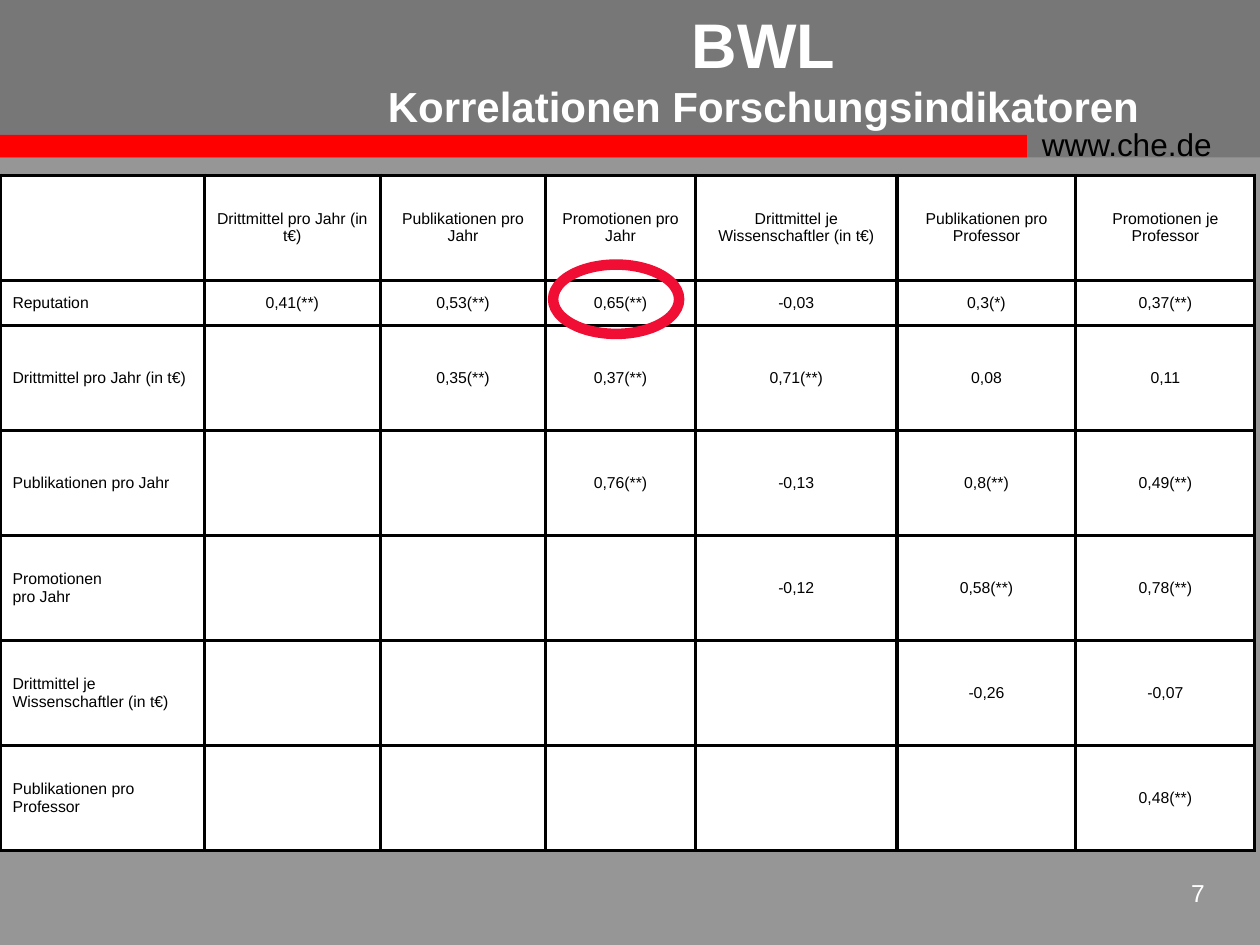
from lxml.etree import SubElement
from pptx import Presentation
from pptx.dml.color import RGBColor
from pptx.enum.shapes import MSO_SHAPE as Form
from pptx.enum.text import MSO_ANCHOR as Anchor, MSO_AUTO_SIZE as Fit, PP_ALIGN as Align
from pptx.oxml.ns import qn
from pptx.util import Inches, Pt

BLACK = RGBColor(0, 0, 0)
WHITE = RGBColor(255, 255, 255)
GREY = RGBColor(0x96, 0x96, 0x96)
DARK = RGBColor(0x77, 0x77, 0x77)
RED = RGBColor(255, 0, 0)
ROSE = RGBColor(0xF0, 0x0E, 0x34)

WIDTHS = [1.62, 1.4, 1.31, 1.19, 1.6, 1.42, 1.42]
HEAD_H, ROW_H = 5 / 6, 0.36
ROWS = [
    ["", "Drittmittel pro Jahr (in t€)", "Publikationen pro Jahr", "Promotionen pro Jahr",
     "Drittmittel je Wissenschaftler (in t€)", "Publikationen pro Professor",
     "Promotionen je Professor"],
    ["Reputation", "0,41(**)", "0,53(**)", "0,65(**)", "-0,03", "0,3(*)", "0,37(**)"],
    ["Drittmittel pro Jahr (in t€)", "", "0,35(**)", "0,37(**)", "0,71(**)", "0,08", "0,11"],
    ["Publikationen pro Jahr", "", "", "0,76(**)", "-0,13", "0,8(**)", "0,49(**)"],
    ["Promotionen\vpro Jahr", "", "", "", "-0,12", "0,58(**)", "0,78(**)"],
    ["Drittmittel je Wissenschaftler (in t€)", "", "", "", "", "-0,26", "-0,07"],
    ["Publikationen pro Professor", "", "", "", "", "", "0,48(**)"],
]
HEIGHTS = [ROW_H if row[0] == "Reputation" else HEAD_H for row in ROWS]


def write(frame, text, sizes=(9,), color=BLACK, bold=False, align=Align.LEFT, font="Arial"):
    """Fill a frame with one paragraph; sizes go line by line, the last one repeats."""
    par = frame.paragraphs[0]
    par.text = text
    par.alignment = align
    for num, run in enumerate(par.runs):
        run.font.name = font
        run.font.size = Pt(sizes[min(num, len(sizes) - 1)])
        run.font.bold = bold
        run.font.color.rgb = color
    for gap in par._p.findall(qn("a:br")):
        SubElement(gap, qn("a:rPr"), sz=str(sizes[0] * 100))


class Page:
    """Holds the slide and the style of its elements."""

    def __init__(self, deck, back):
        self.slide = deck.slides.add_slide(deck.slide_layouts[5])
        self.shapes = self.slide.shapes
        fill = self.slide.background.fill
        fill.solid()
        fill.fore_color.rgb = back

    def shape(self, form, box, fill=None, line=None, width=1):
        item = self.shapes.add_shape(form, *map(Inches, box))
        item.shadow.inherit = False
        if fill is None:
            item.fill.background()
        else:
            item.fill.solid()
            item.fill.fore_color.rgb = fill
        if line is None:
            item.line.fill.background()
        else:
            item.line.color.rgb = line
            item.line.width = Pt(width)

    def text(self, box, text, wrap=True, **style):
        frame = self.shapes.add_textbox(*map(Inches, box)).text_frame
        frame.word_wrap = wrap
        write(frame, text, **style)

    def title(self, box, text, **style):
        item = self.shapes.title
        item.left, item.top, item.width, item.height = map(Inches, box)
        frame = item.text_frame
        frame.auto_size = Fit.NONE
        frame.word_wrap = True
        frame.vertical_anchor = Anchor.MIDDLE
        write(frame, text, **style)
        self.shapes._spTree.append(item._element)

    def border(self, cell, color, width):
        props = cell._tc.get_or_add_tcPr()
        for side in ("lnL", "lnR", "lnT", "lnB"):
            line = SubElement(props, qn(f"a:{side}"), w=str(Pt(width)))
            fill = SubElement(line, qn("a:solidFill"))
            SubElement(fill, qn("a:srgbClr"), val=str(color))

    def table(self, left, top, rows, widths, heights):
        box = (left, top, sum(widths), sum(heights))
        grid = self.shapes.add_table(len(rows), len(widths), *map(Inches, box)).table
        for col, width in zip(grid.columns, widths):
            col.width = Inches(width)
        for line, height, row in zip(grid.rows, heights, rows):
            line.height = Inches(height)
            for num, (cell, text) in enumerate(zip(line.cells, row)):
                self.border(cell, BLACK, 2)
                cell.fill.solid()
                cell.fill.fore_color.rgb = WHITE
                cell.vertical_anchor = Anchor.MIDDLE
                if text:
                    write(cell.text_frame, text, align=Align.CENTER if num else Align.LEFT)


def main():
    deck = Presentation()
    deck.slide_width, deck.slide_height = Inches(10), Inches(7.5)
    page = Page(deck, GREY)
    page.shape(Form.RECTANGLE, (0, 0, 10, 1.25), fill=DARK)
    page.shape(Form.RECTANGLE, (0, 1.07, 8.15, 0.18), fill=RED)
    page.text((8.17, 0.94, 1.75, 0.4), "www.che.de", wrap=False, sizes=(18,))
    page.text((9.08, 6.92, 0.58, 0.42), "7", sizes=(14,), color=WHITE, align=Align.RIGHT)
    page.title((2.48, 0, 7.16, 1.08), "BWL\vKorrelationen Forschungsindikatoren",
               sizes=(36, 24), color=WHITE, bold=True, align=Align.CENTER)
    page.table(0, 1.39, ROWS, WIDTHS, HEIGHTS)
    page.shape(Form.OVAL, (4.39, 2.1, 1, 0.55), line=ROSE, width=6)
    deck.save("out.pptx")


if __name__ == "__main__":
    main()
